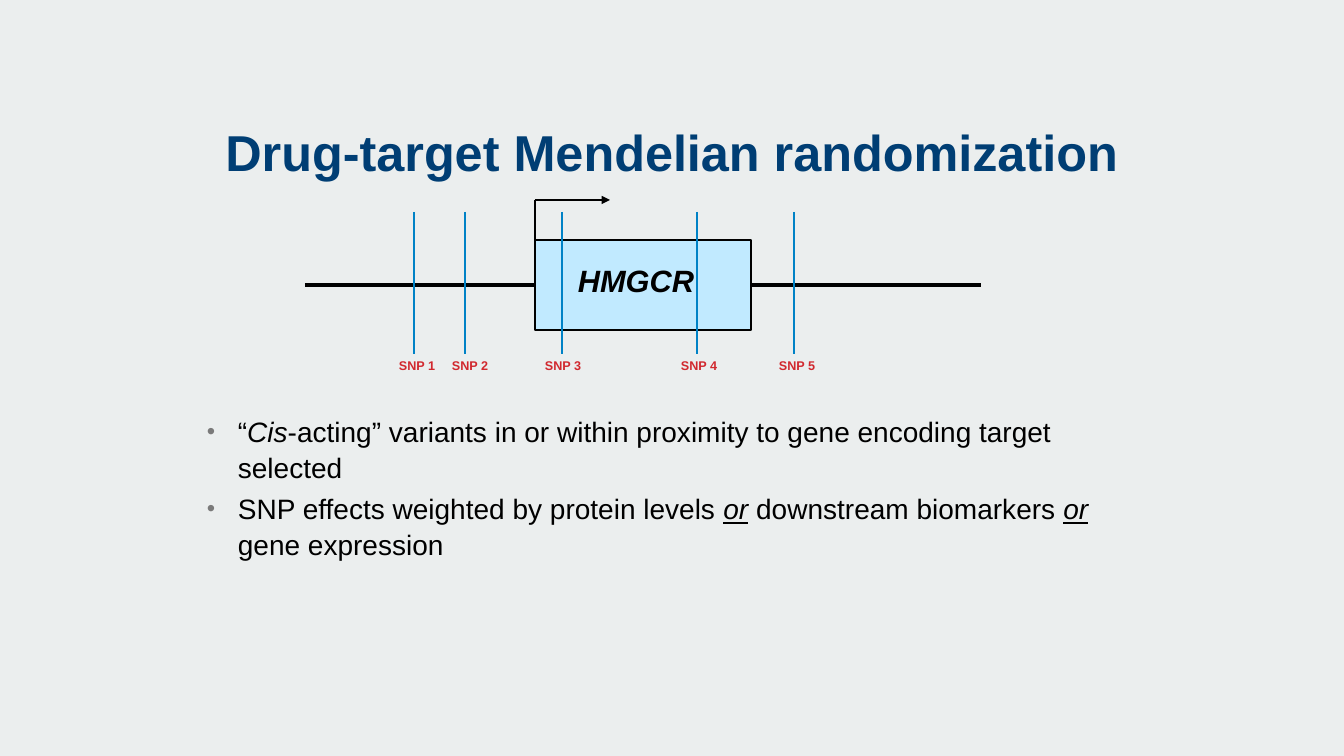
from dataclasses import dataclass

from lxml import etree
from pptx import Presentation
from pptx import util as u
from pptx.dml.color import RGBColor
from pptx.enum import shapes, text
from pptx.oxml import ns


@dataclass(frozen=True)
class Theme:
    font: str = "Arial"
    background: str = "EBEEEE"
    title: str = "003E74"
    ink: str = "000000"
    gene: str = "C1EAFF"
    variant: str = "0082C6"
    label: str = "D1282E"
    bullet: str = "7A7A7A"
    title_size: int = 36
    gene_size: int = 22
    body_size: int = 20
    label_size: int = 9


def rgb(value):
    return RGBColor.from_string(value)


def add_xml(parent, tag, **attrs):
    return etree.SubElement(parent, ns.qn(tag), attrs)


class Deck:
    PX = 914400 / 100.8

    def __init__(self, theme, width, height):
        self.theme = theme
        self.prs = Presentation()
        self.prs.slide_width, self.prs.slide_height = self.px(width, height)
        self.s = self.prs.slides.add_slide(self.prs.slide_layouts[6])
        fill = self.s.background.fill
        fill.solid()
        fill.fore_color.rgb = rgb(theme.background)

    def px(self, *lengths):
        return [u.Emu(round(n * self.PX)) for n in lengths]

    def rect(self, x, y, w, h, fill, line, weight):
        sp = self.s.shapes.add_shape(shapes.MSO_SHAPE.RECTANGLE, *self.px(x, y, w, h))
        sp.shadow.inherit = False
        sp.fill.solid()
        sp.fill.fore_color.rgb = rgb(fill)
        sp.line.color.rgb = rgb(line)
        sp.line.width = u.Pt(weight)
        return sp

    def line(self, x1, y1, x2, y2, color, weight, arrow=False):
        c = self.s.shapes.add_connector(
            shapes.MSO_CONNECTOR.STRAIGHT, *self.px(x1, y1, x2, y2))
        c.line.color.rgb = rgb(color)
        c.line.width = u.Pt(weight)
        if arrow:
            add_xml(c.line._get_or_add_ln(), "a:tailEnd", type="triangle")
        add_xml(c._element.spPr, "a:effectLst")
        return c

    def run(self, p, words, size, color, bold=False, italic=False, underline=False):
        r = p.add_run()
        r.text = words
        r.font.name = self.theme.font
        r.font.size = u.Pt(size)
        r.font.color.rgb = rgb(color)
        r.font.bold, r.font.italic, r.font.underline = bold, italic, underline

    def frame(self, x, y, w, h):
        tf = self.s.shapes.add_textbox(*self.px(x, y, w, h)).text_frame
        tf.word_wrap = True
        return tf

    def text(self, words, x, y, w, h, align=text.PP_ALIGN.LEFT, **style):
        p = self.frame(x, y, w, h).paragraphs[0]
        p.alignment = align
        self.run(p, words, **style)

    def bullets(self, items, x, y, w, h, indent):
        """Each item is a list of (words, extra run format) pairs."""
        tf = self.frame(x, y, w, h)
        hang = self.px(indent)[0]
        for i, item in enumerate(items):
            p = tf.add_paragraph() if i else tf.paragraphs[0]
            p.line_spacing = 1.06
            if i:
                p.space_before = u.Pt(4)
            pPr = p._p.get_or_add_pPr()
            pPr.set("marL", str(hang))
            pPr.set("indent", str(-hang))
            add_xml(add_xml(pPr, "a:buClr"), "a:srgbClr", val=self.theme.bullet)
            add_xml(pPr, "a:buSzPct", val="85000")
            add_xml(pPr, "a:buFont", typeface=self.theme.font)
            add_xml(pPr, "a:buChar", char="•")
            for words, extra in item:
                self.run(p, words, self.theme.body_size, self.theme.ink, **extra)


def main():
    t = Theme()
    d = Deck(t, 1344, 756)

    d.text("Drug-target Mendelian randomization", 168, 116, 1008, 104,
           align=text.PP_ALIGN.CENTER, size=t.title_size, color=t.title, bold=True)

    left, top, width, height = 535, 240, 216, 90
    right, middle, flank = left + width, top + height // 2, 230
    gene = d.rect(left, top, width, height, t.gene, t.ink, 2)
    d.text("HMGCR", 568, 257, 285, 47,
           size=t.gene_size, color=t.ink, bold=True, italic=True)
    upstream = d.line(left - flank, middle, left, middle, t.ink, 3)
    upstream.end_connect(gene, 1)
    downstream = d.line(right, middle, right + flank, middle, t.ink, 3)
    downstream.begin_connect(gene, 3)

    start = 200
    d.line(left, top, left, start, t.ink, 1.75)
    d.line(left, start, left + 75, start, t.ink, 1.75, arrow=True)

    variants = [(414, 389), (465, 442), (562, 535), (697, 671), (794, 769)]
    for n, (x, label_x) in enumerate(variants, 1):
        d.line(x, 212, x, 354, t.variant, 1.5)
        d.text(f"SNP {n}", label_x, 353, 100, 25,
               size=t.label_size, color=t.label, bold=True)

    italic = {"italic": True}
    stressed = {"italic": True, "underline": True}
    d.bullets([
        [("“", {}), ("Cis", italic),
         ("-acting” variants in or within proximity to gene encoding target selected", {})],
        [("SNP effects weighted by protein levels ", {}), ("or", stressed),
         (" downstream biomarkers ", {}), ("or", stressed), (" gene expression", {})],
    ], 197, 408, 928, 194, indent=31)

    d.prs.save("out.pptx")


if __name__ == "__main__":
    main()
